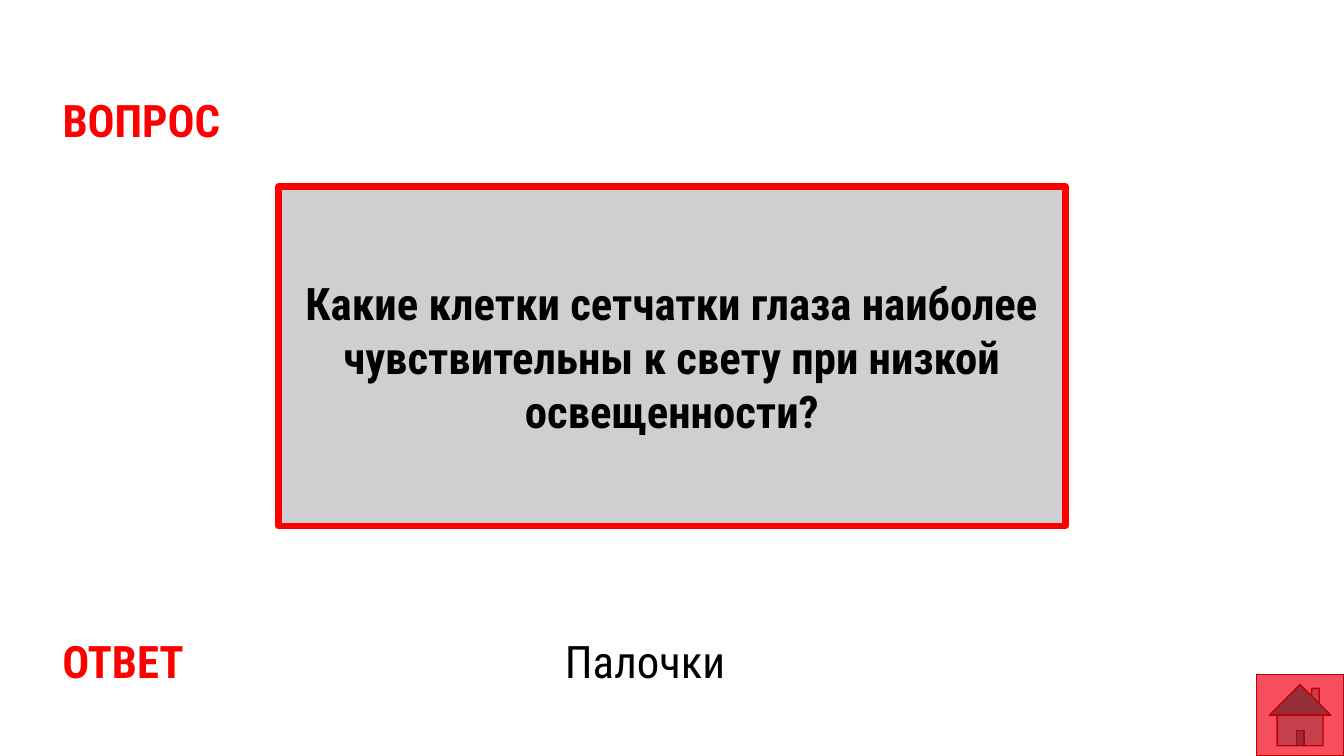
from pptx import Presentation
from pptx.dml.color import RGBColor
from pptx.enum.shapes import MSO_SHAPE
from pptx.enum.text import MSO_ANCHOR, MSO_AUTO_SIZE, PP_ALIGN
from pptx.util import Pt

COLORS = {
    "accent": "FF0000",
    "panel": "D0CECE",
    "text": "000000",
    "home": "F74F5F",
    "home_line": "C00000",
}
FONT = "Roboto Condensed"
SLIDE_WIDTH, SLIDE_HEIGHT = 960, 540
LABEL_LEFT, LABEL_HEIGHT = 37.44, 46.08
ANSWER_TOP = 449.28


def color(name):
    return RGBColor.from_string(COLORS[name])


def place(part, box):
    part.left, part.top, part.width, part.height = [Pt(length) for length in box]


def write(part, text, color_name, bold, align, anchor):
    frame = part.text_frame
    frame.text = text
    frame.word_wrap = True
    frame.auto_size = MSO_AUTO_SIZE.NONE
    frame.vertical_anchor = anchor
    paragraph = frame.paragraphs[0]
    paragraph.alignment = align
    font = paragraph.runs[0].font
    font.name = FONT
    font.size = Pt(32)
    font.bold = bold
    font.color.rgb = color(color_name)


def paint(shape, fill, line, line_width):
    shape.shadow.inherit = False
    shape.fill.solid()
    shape.fill.fore_color.rgb = color(fill)
    shape.line.color.rgb = color(line)
    shape.line.width = Pt(line_width)


def add_heading(slide, box, text):
    heading = slide.shapes.title
    place(heading, box)
    write(heading, text, "accent", True, PP_ALIGN.LEFT, MSO_ANCHOR.TOP)


def add_question(slide, box, text):
    panel = slide.shapes.add_shape(MSO_SHAPE.RECTANGLE, *[Pt(length) for length in box])
    paint(panel, "panel", "accent", 4.5)
    write(panel, text, "text", True, PP_ALIGN.CENTER, MSO_ANCHOR.MIDDLE)


def add_caption(slide, box, text, color_name, bold, align):
    caption = slide.shapes.add_textbox(*[Pt(length) for length in box])
    write(caption, text, color_name, bold, align, MSO_ANCHOR.TOP)


def add_answer(slide, box, label, answer):
    left, top, width, height = box
    answer_width = 372.96
    add_caption(slide, (left, top, 118.8, height), label, "accent", True, PP_ALIGN.LEFT)
    add_caption(slide, (left + width - answer_width, top, answer_width, height),
                answer, "text", False, PP_ALIGN.CENTER)


def add_home_button(slide, box):
    home = slide.shapes.add_shape(MSO_SHAPE.ACTION_BUTTON_HOME, *[Pt(length) for length in box])
    paint(home, "home", "home_line", 1)


def build_question_slide(presentation):
    slide = presentation.slides.add_slide(presentation.slide_layouts[5])
    add_heading(slide, (LABEL_LEFT, 62.64, 372.96, LABEL_HEIGHT), "ВОПРОС")
    panel_width = 562.32
    add_question(slide, ((SLIDE_WIDTH - panel_width) / 2, 133.2, panel_width, 242.64),
                 "Какие клетки сетчатки глаза наиболее чувствительны "
                 "к свету при низкой освещенности?")
    add_answer(slide, (LABEL_LEFT, ANSWER_TOP, 609.84, LABEL_HEIGHT), "ОТВЕТ", "Палочки")
    home_width, home_height = 62.64, 58.32
    add_home_button(slide, (SLIDE_WIDTH - home_width, SLIDE_HEIGHT - home_height,
                            home_width, home_height))


def main():
    presentation = Presentation()
    presentation.slide_width = Pt(SLIDE_WIDTH)
    presentation.slide_height = Pt(SLIDE_HEIGHT)
    build_question_slide(presentation)
    presentation.save("out.pptx")


if __name__ == "__main__":
    main()
